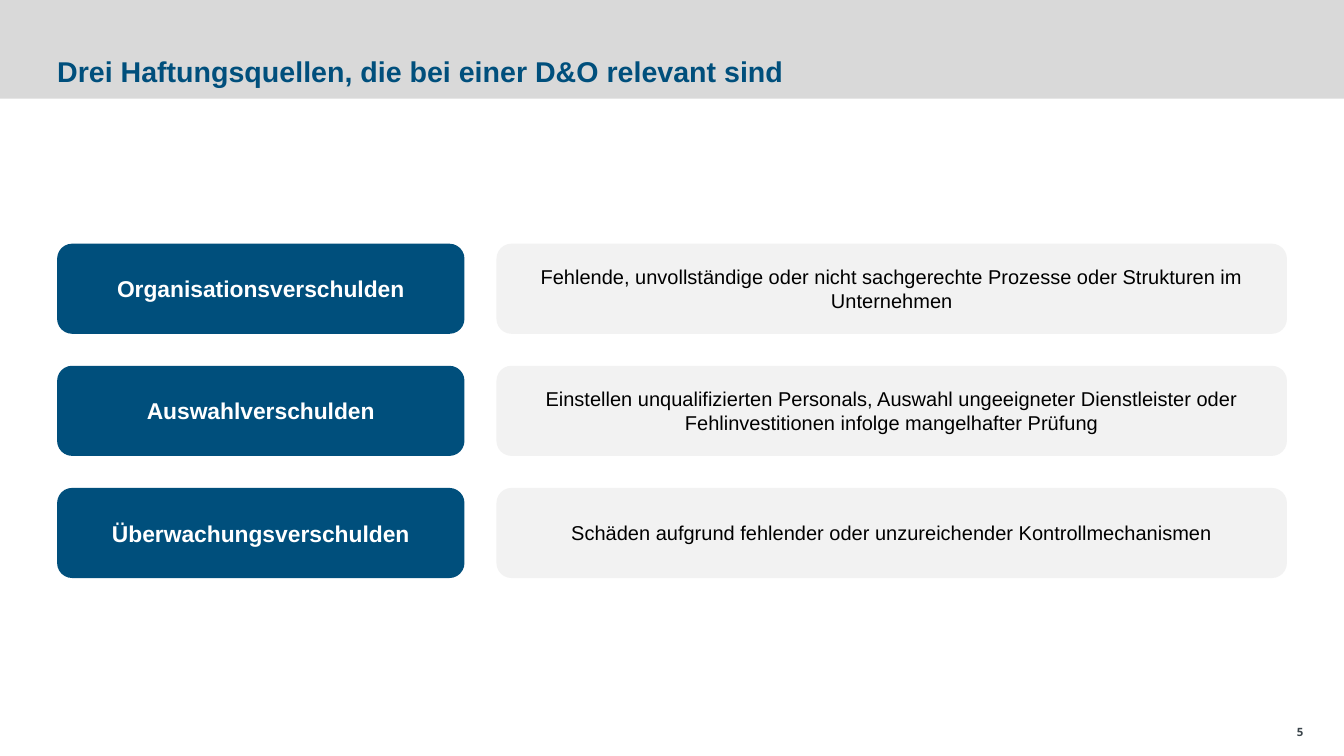
from pptx import Presentation
from pptx.dml.color import RGBColor
from pptx.enum import shapes, text
from pptx.util import Pt

BLUE, BAND, PALE = "004F7C", "D9D9D9", "F2F2F2"
WHITE, BLACK, SLATE = "FFFFFF", "000000", "3B454B"
LEFT, CENTER = text.PP_ALIGN.LEFT, text.PP_ALIGN.CENTER
MIDDLE, BOTTOM = text.MSO_ANCHOR.MIDDLE, text.MSO_ANCHOR.BOTTOM

SOURCES = [
    ("Organisationsverschulden",
     "Fehlende, unvollständige oder nicht sachgerechte Prozesse oder Strukturen im Unternehmen"),
    ("Auswahlverschulden",
     "Einstellen unqualifizierten Personals, Auswahl ungeeigneter Dienstleister oder "
     "Fehlinvestitionen infolge mangelhafter Prüfung"),
    ("Überwachungsverschulden",
     "Schäden aufgrund fehlender oder unzureichender Kontrollmechanismen"),
]


def color(hex_value):
    return RGBColor.from_string(hex_value)


def set_attrs(obj, values):
    for name, value in values.items():
        setattr(obj, name, value)


def write(sp, words, size, hex_value, bold=False, font="Arial", align=CENTER,
          anchor=MIDDLE, inset=(0, 0), wrap=True):
    tf = sp.text_frame
    x, y = map(Pt, inset)
    set_attrs(tf, dict(auto_size=text.MSO_AUTO_SIZE.NONE, word_wrap=wrap,
                       vertical_anchor=anchor, margin_left=x, margin_right=x,
                       margin_top=y, margin_bottom=y))
    p = tf.paragraphs[0]
    p.alignment = align
    r = p.add_run()
    r.text = words
    set_attrs(r.font, dict(name=font, size=Pt(size), bold=bold))
    r.font.color.rgb = color(hex_value)


def add_block(s, kind, box, fill):
    sp = s.shapes.add_shape(kind, *map(Pt, box))
    sp.shadow.inherit = False
    sp.fill.solid()
    sp.fill.fore_color.rgb = color(fill)
    sp.line.fill.background()
    return sp


def add_header(s, box):
    x, y, w, h = box
    # Grey band, with the title placed in front of it
    band = add_block(s, shapes.MSO_SHAPE.RECTANGLE, box, BAND)
    title = s.shapes.title
    band._element.addnext(title._element)
    set_attrs(title, dict(left=Pt(x + 40), top=Pt(y + 39.6), width=Pt(737.3), height=Pt(31.7)))
    write(title, "Drei Haftungsquellen, die bei einer D&O relevant sind", 20, BLUE,
          bold=True, align=LEFT, anchor=BOTTOM, inset=(0, 3.6))


def add_sources(s, box, gap=22.4, label_w=285.2):
    x, y, w, h = box
    row_h = (h - gap * (len(SOURCES) - 1)) / len(SOURCES)
    text_x = x + label_w + gap
    for i, (label, description) in enumerate(SOURCES):
        row_y = y + i * (row_h + gap)
        # Name of the liability source
        sp = add_block(s, shapes.MSO_SHAPE.ROUNDED_RECTANGLE, (x, row_y, label_w, row_h), BLUE)
        write(sp, label, 16, WHITE, bold=True)
        # Its explanation
        sp = add_block(s, shapes.MSO_SHAPE.ROUNDED_RECTANGLE,
                       (text_x, row_y, x + w - text_x, row_h), PALE)
        write(sp, description, 14, BLACK, inset=(7.2, 3.6))


def add_page_number(s, box):
    sp = s.shapes.add_textbox(*map(Pt, box))
    write(sp, "5", 8, SLATE, bold=True, font="Open Sans", align=LEFT, wrap=False)


def main():
    prs = Presentation()
    set_attrs(prs, dict(slide_width=Pt(941), slide_height=Pt(529.2)))
    s = prs.slides.add_slide(prs.slide_layouts[5])
    add_header(s, (0, -5.8, 941, 74.9))
    add_sources(s, (40, 170.6, 861, 234))
    add_page_number(s, (907.9, 507.6, 10, 9.4))
    prs.save("out.pptx")


if __name__ == "__main__":
    main()
